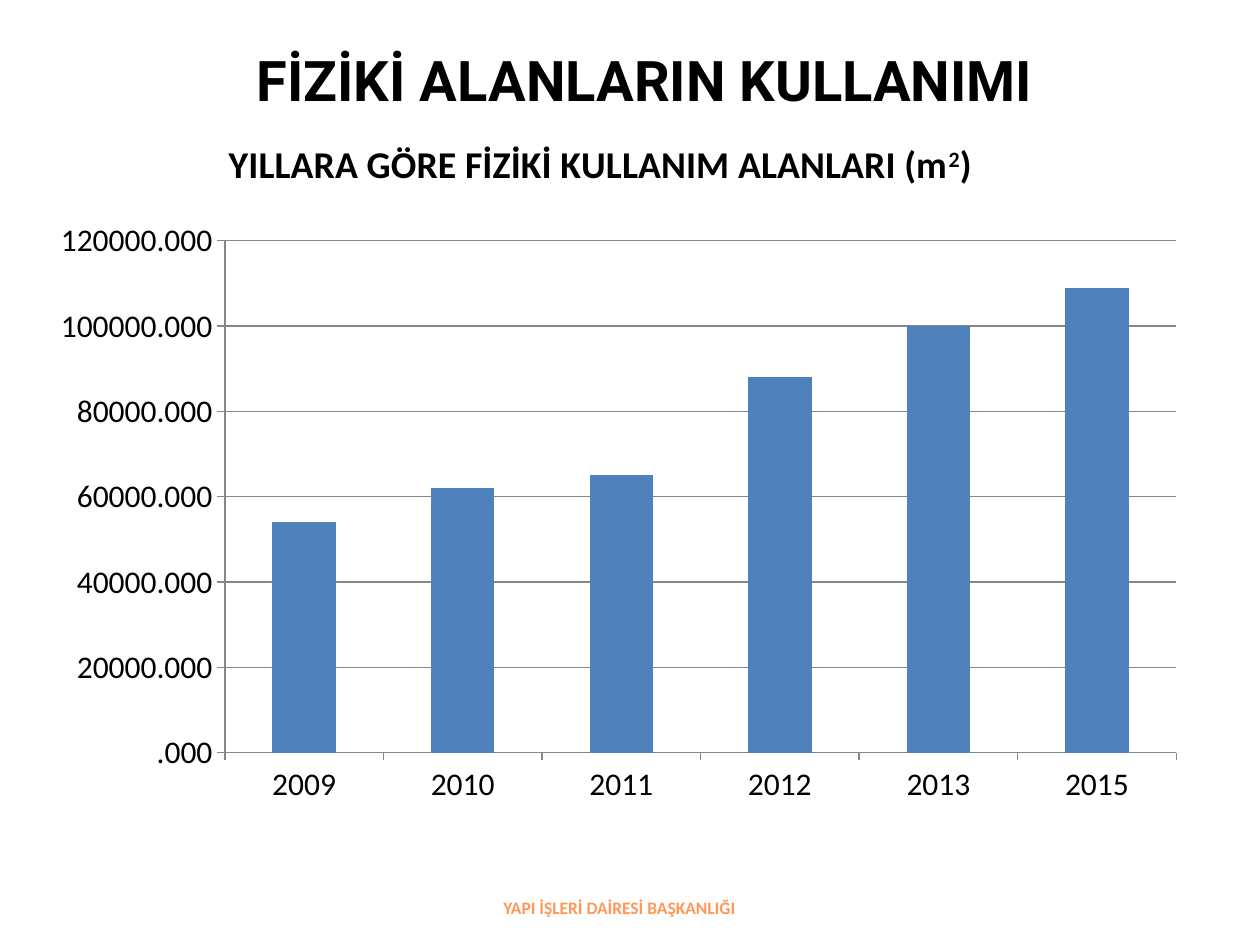
from dataclasses import dataclass

import lxml.etree
import pptx
import pptx.chart.data
import pptx.dml.color
import pptx.enum.chart
import pptx.enum.text
import pptx.oxml
import pptx.oxml.ns
import pptx.util

WIDE, HIGH = 10, 7.5
BLACK, GREY, BLUE, ORANGE = "000000", "868686", "4F81BD", "FF9856"
YEARS = ["2009", "2010", "2011", "2012", "2013", "2015"]
AREAS = [54000, 62000, 65000, 88000, 100000, 109000]


@dataclass
class Box:
    left: float
    top: float
    width: float
    height: float

    def place(self) -> list:
        shares = ((self.left, WIDE), (self.top, HIGH),
                  (self.width, WIDE), (self.height, HIGH))
        return [pptx.util.Inches(share * size / 100) for share, size in shares]


@dataclass
class Label:
    text: str
    box: Box
    size: float
    face: str
    hue: str


HEAD = Label("FİZİKİ ALANLARIN KULLANIMI", Box(10.2, 4.13, 82, 8.53), 32, "Roboto", BLACK)
FOOT = Label("YAPI İŞLERİ DAİRESİ BAŞKANLIĞI", Box(10, 94.27, 78.3, 3.6), 10, "Calibri", ORANGE)
PLOT = Box(3.1, 13.6, 92.2, 72.93)


def color(code: str) -> pptx.dml.color.RGBColor:
    return pptx.dml.color.RGBColor.from_string(code)


def style(font, size: float, face: str, hue: str, bold: bool = False) -> None:
    font.size = pptx.util.Pt(size)
    font.name = face
    font.bold = bold
    font.color.rgb = color(hue)


def write(shape, label: Label) -> None:
    shape.left, shape.top, shape.width, shape.height = label.box.place()
    frame = shape.text_frame
    frame.text = label.text
    frame.word_wrap = True
    frame.vertical_anchor = pptx.enum.text.MSO_ANCHOR.TOP
    frame.auto_size = pptx.enum.text.MSO_AUTO_SIZE.SHAPE_TO_FIT_TEXT
    line = frame.paragraphs[0]
    line.alignment = pptx.enum.text.PP_ALIGN.CENTER
    style(line.runs[0].font, label.size, label.face, label.hue, True)


def layout(**parts) -> lxml.etree.ElementBase:
    space = pptx.oxml.ns.nsdecls("c")
    body = "".join(f'<c:{name} val="{value}"/>' for name, value in parts.items())
    return pptx.oxml.parse_xml(
        f"<c:layout {space}><c:manualLayout>{body}</c:manualLayout></c:layout>")


def pin(node, after: str, **parts) -> None:
    for old in node.findall(pptx.oxml.ns.qn("c:layout")):
        node.remove(old)
    mark = node.find(pptx.oxml.ns.qn(after)) if after else None
    node.insert(0 if mark is None else node.index(mark) + 1, layout(**parts))


def caption(chart) -> None:
    frame = chart.chart_title.text_frame
    line = frame.paragraphs[0]
    for text in ("YILLARA GÖRE FİZİKİ KULLANIM ALANLARI (m", "2", ")"):
        run = line.add_run()
        run.text = text
        style(run.font, 21.6, "Calibri", BLACK, True)
    line.runs[1].font._element.set("baseline", "30000")
    chart.chart_title.include_in_layout = False
    pin(chart.chart_title._element, "c:tx", xMode="edge", yMode="edge", x=0.16, y=0.01)


def trim(axis) -> None:
    axis.major_tick_mark = pptx.enum.chart.XL_TICK_MARK.OUTSIDE
    axis.minor_tick_mark = pptx.enum.chart.XL_TICK_MARK.NONE
    axis.format.line.color.rgb = color(GREY)
    axis.format.line.width = pptx.util.Pt(0.75)
    style(axis.tick_labels.font, 18, "Calibri", BLACK)


def graph(slide) -> None:
    data = pptx.chart.data.CategoryChartData()
    data.categories = YEARS
    data.add_series("Series 1", AREAS)
    kind = pptx.enum.chart.XL_CHART_TYPE.COLUMN_CLUSTERED
    chart = slide.shapes.add_chart(kind, *PLOT.place(), data).chart
    style(chart.font, 18, "Calibri", BLACK)
    chart.has_legend = False
    caption(chart)

    bars = chart.plots[0]
    bars.gap_width = 150
    bars.vary_by_categories = False
    fill = bars.series[0].format.fill
    fill.solid()
    fill.fore_color.rgb = color(BLUE)

    scale = chart.value_axis
    for axis in (chart.category_axis, scale):
        trim(axis)
    scale.minimum_scale, scale.maximum_scale, scale.major_unit = 0, 120000, 20000
    scale.tick_labels.number_format = "#.##0"
    scale.tick_labels.number_format_is_linked = False
    grid = scale.major_gridlines.format.line
    grid.color.rgb = color(GREY)
    grid.width = pptx.util.Pt(0.75)
    area = chart._chartSpace.chart.plotArea
    pin(area, "", layoutTarget="inner", xMode="edge", yMode="edge",
        x=0.16, y=0.163, w=0.819, h=0.743)


def main() -> None:
    deck = pptx.Presentation()
    deck.slide_width = pptx.util.Inches(WIDE)
    deck.slide_height = pptx.util.Inches(HIGH)
    slide = deck.slides.add_slide(deck.slide_layouts.get_by_name("Title Only"))
    write(slide.shapes.title, HEAD)
    write(slide.shapes.add_textbox(*FOOT.box.place()), FOOT)
    graph(slide)
    deck.save("out.pptx")


if __name__ == "__main__":
    main()
